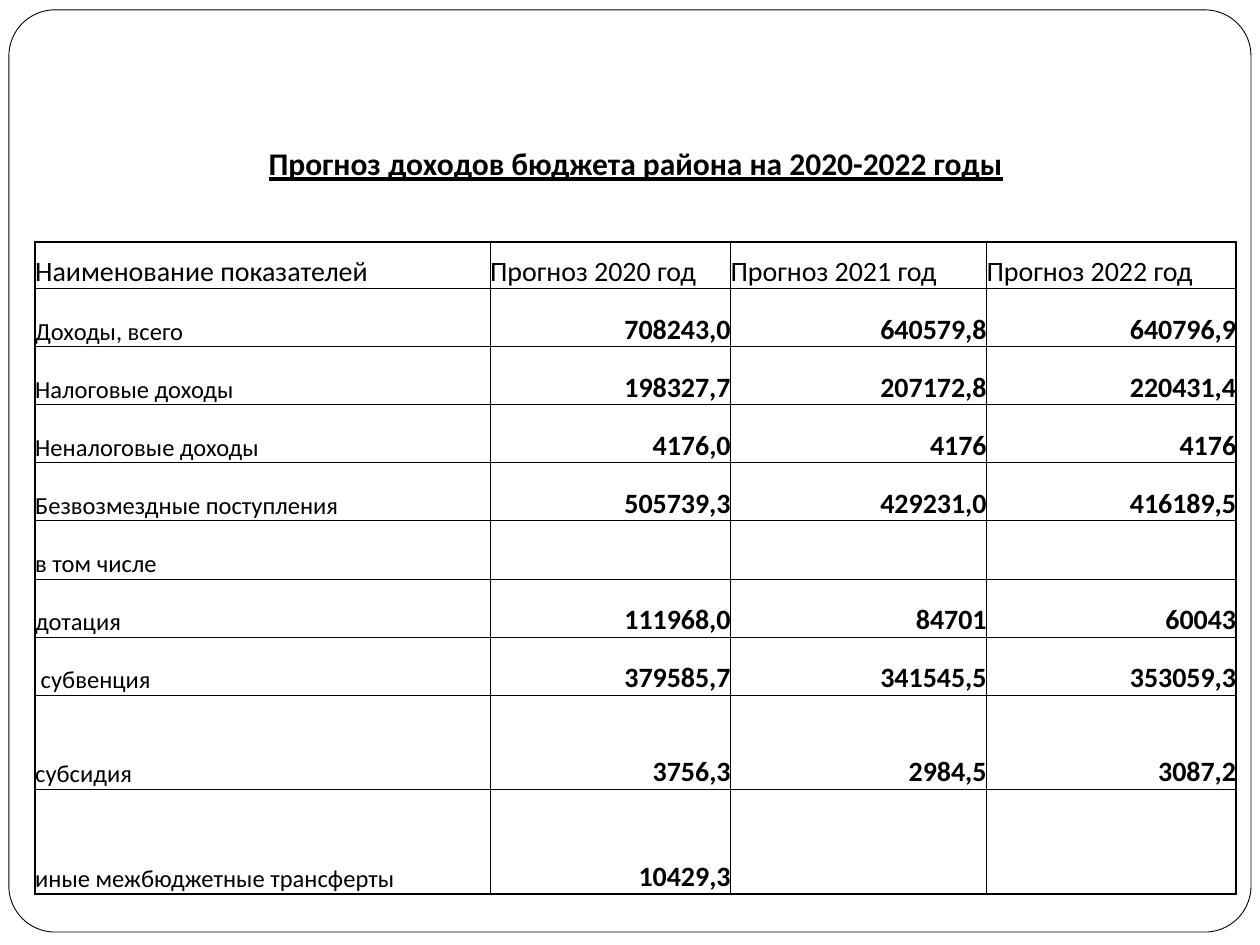
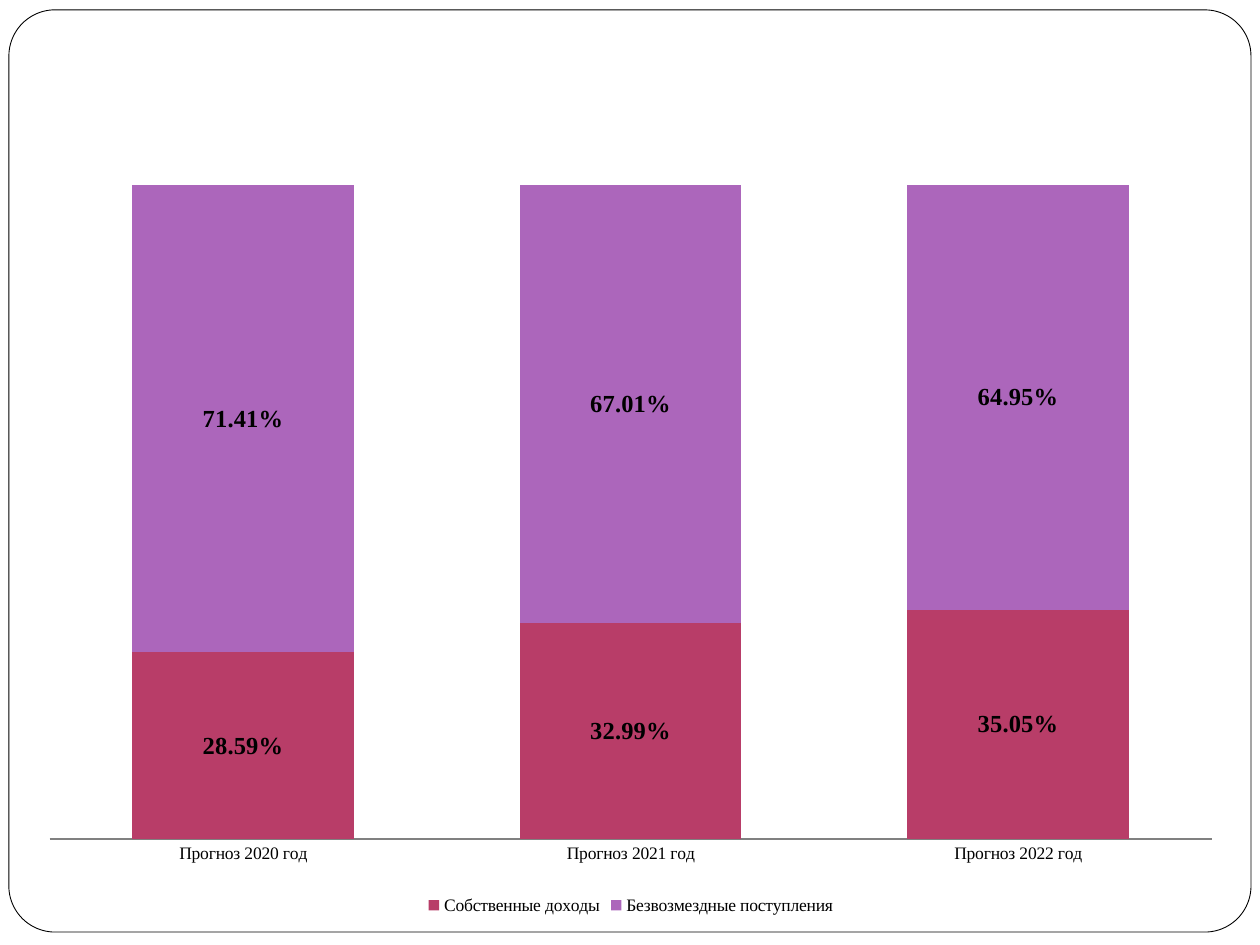
from lxml import etree
from pptx import Presentation
from pptx.chart.data import CategoryChartData
from pptx.dml.color import RGBColor
from pptx.enum.chart import XL_CHART_TYPE as ChartType, XL_LEGEND_POSITION as LegendPosition
from pptx.enum.chart import XL_TICK_MARK as TickMark
from pptx.enum.shapes import MSO_SHAPE as Preset
from pptx.enum.text import MSO_ANCHOR as Anchor, PP_ALIGN as Align
from pptx.oxml.ns import qn
from pptx.util import Cm, Pt

TITLE = "Прогноз доходов бюджета района на 2020-2022 годы"
YEARS = ["Прогноз 2020 год", "Прогноз 2021 год", "Прогноз 2022 год"]
INDICATORS = [
    ("Доходы, всего", "708243,0", "640579,8", "640796,9"),
    ("Налоговые доходы", "198327,7", "207172,8", "220431,4"),
    ("Неналоговые доходы", "4176,0", "4176", "4176"),
    ("Безвозмездные поступления", "505739,3", "429231,0", "416189,5"),
    ("в том числе", "", "", ""),
    ("дотация", "111968,0", "84701", "60043"),
    (" субвенция", "379585,7", "341545,5", "353059,3"),
    ("субсидия", "3756,3", "2984,5", "3087,2"),
    ("иные межбюджетные трансферты", "10429,3", "", ""),
]

BLACK = RGBColor(0x00, 0x00, 0x00)
WHITE = RGBColor(0xFF, 0xFF, 0xFF)
AXIS_GRAY = RGBColor(0x80, 0x80, 0x80)
CRIMSON = RGBColor(0xB8, 0x3D, 0x68)
PURPLE = RGBColor(0xAC, 0x66, 0xBB)

SHARES = [
    ("Собственные доходы", (0.2859, 0.3299, 0.3505), CRIMSON),
    ("Безвозмездные поступления", (0.7141, 0.6701, 0.6495), PURPLE),
]
PERCENT = "0.00%"
TABLE_FONT = "Calibri"
CHART_FONT = "Times New Roman"

COLUMN_WIDTHS = [9.17, 4.85, 5.16, 5.03]
TITLE_HEIGHT, GAP_HEIGHT, HEADER_HEIGHT = 3.18, 1.17, 0.94
ROW_HEIGHTS = [TITLE_HEIGHT, GAP_HEIGHT, HEADER_HEIGHT] + [1.17] * 7 + [1.9, 2.11]
HEADER_ROW = 2
THIN, THICK = 0.5, 1


def add_framed_slide(presentation):
    slide = presentation.slides.add_slide(presentation.slide_layouts[6])
    frame = slide.shapes.add_shape(
        Preset.ROUNDED_RECTANGLE, Cm(0.18), Cm(0.2), Cm(25.04), Cm(18.59))
    frame.adjustments[0] = 0.05
    frame.shadow.inherit = False
    frame.fill.solid()
    frame.fill.fore_color.rgb = WHITE
    frame.line.color.rgb = BLACK
    frame.line.width = Pt(0.5)
    return slide


def set_borders(cell, left=0, right=0, top=0, bottom=0):
    """Widths in points; zero means no line."""
    properties = cell._tc.get_or_add_tcPr()
    sides = zip(("a:lnL", "a:lnR", "a:lnT", "a:lnB"), (left, right, top, bottom))
    for position, (tag, width) in enumerate(sides):
        line = etree.Element(qn(tag), w=str(Pt(width)))
        if width:
            fill = etree.SubElement(line, qn("a:solidFill"))
            etree.SubElement(fill, qn("a:srgbClr"), val=str(BLACK))
        else:
            etree.SubElement(line, qn("a:noFill"))
        properties.insert(position, line)


def write_cell(cell, text, size, bold=False, align=Align.LEFT, underline=False):
    cell.vertical_anchor = Anchor.BOTTOM
    cell.margin_left = cell.margin_right = cell.margin_top = cell.margin_bottom = 0
    paragraph = cell.text_frame.paragraphs[0]
    paragraph.text = text
    paragraph.alignment = align
    font = paragraph.font
    font.name, font.size, font.bold, font.underline = TABLE_FONT, Pt(size), bold, underline
    font.color.rgb = BLACK


def add_income_table(slide):
    row_count, column_count = len(ROW_HEIGHTS), len(COLUMN_WIDTHS)
    table = slide.shapes.add_table(
        row_count, column_count, Cm(0.71), Cm(0.53),
        Cm(sum(COLUMN_WIDTHS)), Cm(sum(ROW_HEIGHTS))).table
    table.first_row = table.horz_banding = False
    for column, width in zip(table.columns, COLUMN_WIDTHS):
        column.width = Cm(width)
    for row, height in zip(table.rows, ROW_HEIGHTS):
        row.height = Cm(height)

    table.cell(0, 0).merge(table.cell(0, column_count - 1))
    write_cell(table.cell(0, 0), TITLE, 18, True, Align.CENTER, underline=True)
    for column, heading in enumerate(["Наименование показателей"] + YEARS):
        write_cell(table.cell(HEADER_ROW, column), heading, 16)
    for row, (name, *amounts) in enumerate(INDICATORS, HEADER_ROW + 1):
        write_cell(table.cell(row, 0), name, 14)
        for column, amount in enumerate(amounts, 1):
            write_cell(table.cell(row, column), amount, 16, True, Align.RIGHT)

    for row in range(row_count):
        for column in range(column_count):
            cell = table.cell(row, column)
            cell.fill.background()
            if row < HEADER_ROW:
                set_borders(cell, bottom=THICK if row == HEADER_ROW - 1 else 0)
            else:
                set_borders(
                    cell,
                    left=THICK if column == 0 else THIN,
                    right=THICK if column == column_count - 1 else THIN,
                    top=THICK if row == HEADER_ROW else THIN,
                    bottom=THICK if row == row_count - 1 else THIN)


def add_share_chart(slide):
    data = CategoryChartData(number_format=PERCENT)
    data.categories = YEARS
    for name, values, _ in SHARES:
        data.add_series(name, values)
    chart = slide.shapes.add_chart(
        ChartType.COLUMN_STACKED, Cm(0.51), Cm(0.74), Cm(24.41), Cm(17.81), data).chart
    chart.has_title = False
    chart.font.name, chart.font.size = CHART_FONT, Pt(10)
    chart.font.color.rgb = BLACK
    chart.has_legend = True
    chart.legend.position = LegendPosition.BOTTOM
    chart.legend.include_in_layout = False

    value_axis = chart.value_axis
    value_axis.visible = False
    value_axis.has_major_gridlines = False
    value_axis.minimum_scale, value_axis.maximum_scale = 0, 1.2
    category_axis = chart.category_axis
    category_axis.major_tick_mark = TickMark.NONE
    category_axis.format.line.color.rgb = AXIS_GRAY

    plot = chart.plots[0]
    plot.gap_width, plot.overlap, plot.vary_by_categories = 75, 100, False
    for series, (_, _, color) in zip(plot.series, SHARES):
        series.format.fill.solid()
        series.format.fill.fore_color.rgb = color
        labels = series.data_labels
        labels.show_value = True
        labels.number_format, labels.number_format_is_linked = PERCENT, False
        labels.font.name, labels.font.size, labels.font.bold = CHART_FONT, Pt(14), True
        labels.font.color.rgb = BLACK


def main():
    presentation = Presentation()
    presentation.slide_width, presentation.slide_height = Cm(25.4), Cm(19.05)
    add_income_table(add_framed_slide(presentation))
    add_share_chart(add_framed_slide(presentation))
    presentation.save("out.pptx")


if __name__ == "__main__":
    main()
